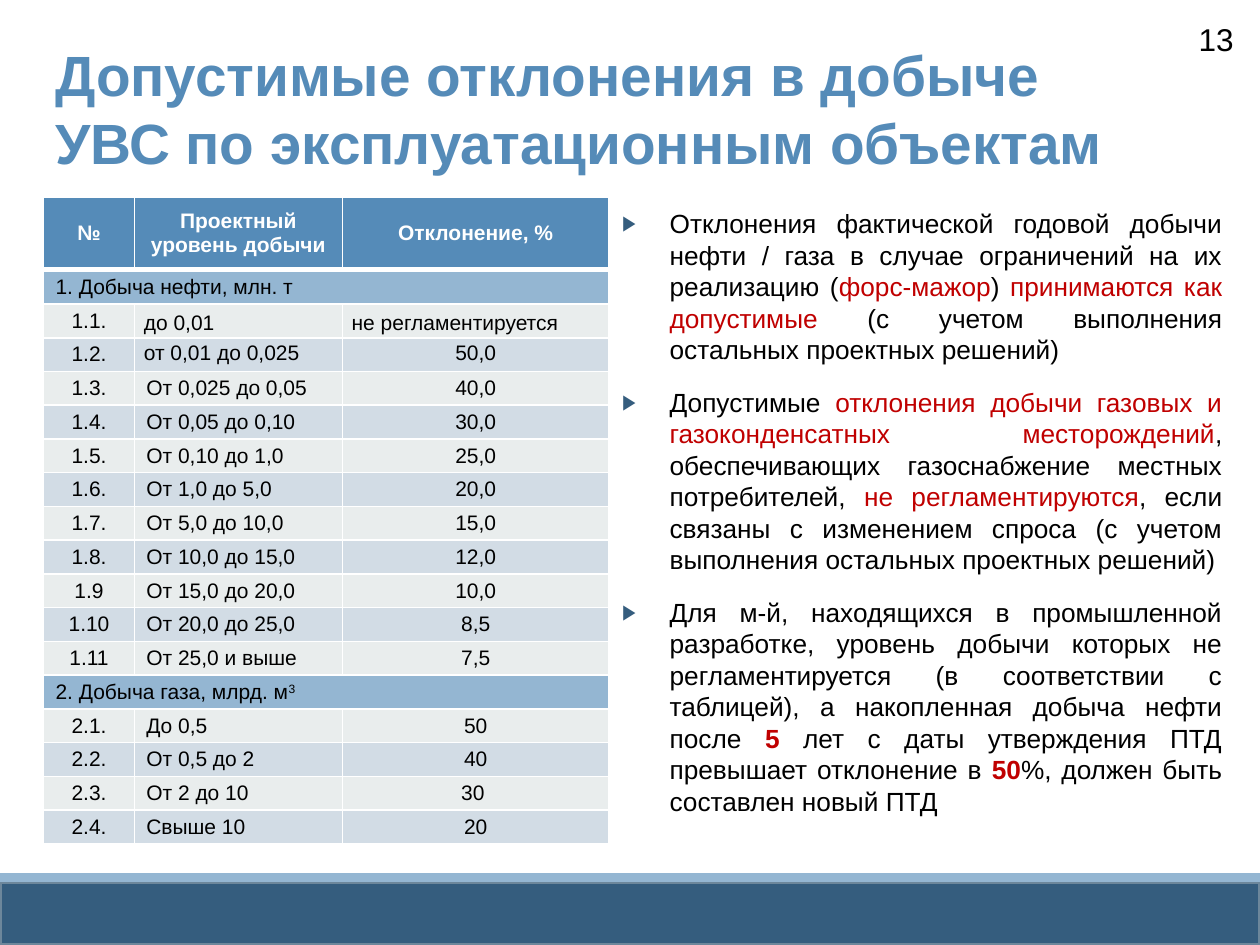
from lxml import etree
from pptx import Presentation
from pptx.dml.color import RGBColor
from pptx.enum import shapes, text
from pptx.oxml import ns
from pptx.util import Cm, Pt

FONT = "Arial"
BLACK, WHITE, RED = "000000", "FFFFFF", "C00000"
BLUE, LIGHT_BLUE, DARK_BLUE = "558BB8", "94B6D2", "355D7E"
STRIPES = ("E9EDED", "D2DCE5")

TITLE = "Допустимые отклонения в добыче УВС по эксплуатационным объектам"
PAGE = "13"
HEADER = ("№", "Проектный уровень добычи", "Отклонение, %")
# Each section: heading, superscript after it, rows
SECTIONS = [
    ("1. Добыча нефти, млн. т", "", [
        ("1.1.", "до 0,01", "не регламентируется"),
        ("1.2.", "от 0,01 до 0,025", "50,0"),
        ("1.3.", "От 0,025 до 0,05", "40,0"),
        ("1.4.", "От 0,05 до 0,10", "30,0"),
        ("1.5.", "От 0,10 до 1,0", "25,0"),
        ("1.6.", "От 1,0 до 5,0", "20,0"),
        ("1.7.", "От 5,0 до 10,0", "15,0"),
        ("1.8.", "От 10,0 до 15,0", "12,0"),
        ("1.9", "От 15,0 до 20,0", "10,0"),
        ("1.10", "От 20,0 до 25,0", "8,5"),
        ("1.11", "От 25,0 и выше", "7,5"),
    ]),
    ("2. Добыча газа, млрд. м", "3", [
        ("2.1.", "До 0,5", "50"),
        ("2.2.", "От 0,5 до 2", "40"),
        ("2.3.", "От 2 до 10", "30 "),
        ("2.4.", "Свыше 10", "20"),
    ]),
]
# Each note: (words, colour, bold)
NOTES = [
    [("Отклонения фактической годовой добычи нефти / газа в случае ограничений "
      "на их реализацию (", BLACK, False),
     ("форс-мажор", RED, False), (") ", BLACK, False),
     ("принимаются как допустимые", RED, False),
     (" (с учетом выполнения остальных проектных решений)", BLACK, False)],
    [("Допустимые ", BLACK, False),
     ("отклонения добычи газовых и газоконденсатных месторождений", RED, False),
     (", обеспечивающих газоснабжение местных потребителей, ", BLACK, False),
     ("не регламентируются", RED, False),
     (", если связаны с изменением спроса (с учетом выполнения остальных "
      "проектных решений)", BLACK, False)],
    [("Для м-й, находящихся в промышленной разработке, уровень добычи которых "
      "не регламентируется (в соответствии с таблицей), а накопленная добыча "
      "нефти после ", BLACK, False),
     ("5", RED, True),
     (" лет с даты утверждения ПТД превышает отклонение в ", BLACK, False),
     ("50", RED, True),
     ("%, должен быть составлен новый ПТД", BLACK, False)],
]

COLUMN_WIDTHS = (1.83, 4.19, 5.38)
HEADER_HEIGHT, FIRST_SECTION_HEIGHT, ROW_HEIGHT = 1.45, 0.7, 0.68
LEFT, CENTER = text.PP_ALIGN.LEFT, text.PP_ALIGN.CENTER
MIDDLE, TOP = text.MSO_ANCHOR.MIDDLE, text.MSO_ANCHOR.TOP


def rgb(color):
    return RGBColor.from_string(color)


def style(run, size, color=BLACK, bold=False):
    run.font.name, run.font.size, run.font.bold = FONT, Pt(size), bold
    run.font.color.rgb = rgb(color)


def add_band(slide, top, height, fill, outline=None):
    band = slide.shapes.add_shape(shapes.MSO_SHAPE.RECTANGLE,
                                  0, Cm(top), Cm(25.4), Cm(height))
    band.shadow.inherit = False
    band.fill.solid()
    band.fill.fore_color.rgb = rgb(fill)
    if outline:
        band.line.color.rgb = rgb(outline)
        band.line.width = Pt(2)
    else:
        band.line.fill.background()


def add_text_frame(slide, left, top, width, height):
    frame = slide.shapes.add_textbox(Cm(left), Cm(top), Cm(width), Cm(height)).text_frame
    frame.word_wrap = True
    return frame


def add_line_of_text(slide, box, words, size, color, bold, align):
    paragraph = add_text_frame(slide, *box).paragraphs[0]
    paragraph.text, paragraph.alignment = words, align
    style(paragraph.runs[0], size, color, bold)


def add_borders(cell, top, bottom):
    """Draw white cell edges; top and bottom are widths in points."""
    props = cell._tc.get_or_add_tcPr()
    edges = (("lnL", 1), ("lnR", 1), ("lnT", top), ("lnB", bottom))
    for position, (tag, width) in enumerate(edges):
        edge = etree.Element(ns.qn("a:" + tag), w=str(Pt(width)))
        fill = etree.SubElement(edge, ns.qn("a:solidFill"))
        etree.SubElement(fill, ns.qn("a:srgbClr"), val=WHITE)
        props.insert(position, edge)


def fill_cell(cell, words, fill, align, color=BLACK, bold=False, anchor=MIDDLE,
              margins=(0.24, 0.05), spacing=None):
    cell.fill.solid()
    cell.fill.fore_color.rgb = rgb(fill)
    cell.vertical_anchor = anchor
    cell.margin_left = cell.margin_right = Cm(margins[0])
    cell.margin_top = cell.margin_bottom = Cm(margins[1])
    paragraph = cell.text_frame.paragraphs[0]
    paragraph.text, paragraph.alignment = words, align
    paragraph.line_spacing = spacing
    style(paragraph.runs[0], 12, color, bold)


def add_deviation_table(slide):
    row_count = 1 + sum(1 + len(rows) for _, _, rows in SECTIONS)
    heights = [HEADER_HEIGHT, FIRST_SECTION_HEIGHT] + [ROW_HEIGHT] * (row_count - 2)
    table = slide.shapes.add_table(row_count, len(HEADER), Cm(0.88), Cm(3.98),
                                   Cm(sum(COLUMN_WIDTHS)), Cm(sum(heights))).table
    for column, width in zip(table.columns, COLUMN_WIDTHS):
        column.width = Cm(width)
    for row, height in zip(table.rows, heights):
        row.height = Cm(height)

    for column, words in enumerate(HEADER):
        fill_cell(table.cell(0, column), words, BLUE, CENTER, WHITE, True)
    line = 1
    for heading, superscript, rows in SECTIONS:
        cell = table.cell(line, 0)
        cell.merge(table.cell(line, len(HEADER) - 1))
        fill_cell(cell, heading, LIGHT_BLUE, LEFT)
        if superscript:
            run = cell.text_frame.paragraphs[0].add_run()
            run.text = superscript
            style(run, 12)
            run.font._element.set("baseline", "30000")
        for index, row in enumerate(rows):
            for column, words in enumerate(row):
                align = LEFT if column == 1 or words == "не регламентируется" else CENTER
                tight = {}
                if line == 1 and index < 2 and column > 0:
                    tight = dict(margins=(0.19, 0), spacing=1.15,
                                 anchor=TOP if index else MIDDLE)
                fill_cell(table.cell(line + 1 + index, column), words,
                          STRIPES[index % 2], align, **tight)
        line += 1 + len(rows)

    for index, row in enumerate(table.rows):
        for cell in row.cells:
            add_borders(cell, 3 if index == 1 else 1, 3 if index == 0 else 1)


def add_bullet(paragraph):
    props = paragraph._p.get_or_add_pPr()
    props.set("marL", str(Cm(0.96)))
    props.set("indent", str(-Cm(0.96)))
    color = etree.SubElement(props, ns.qn("a:buClr"))
    etree.SubElement(color, ns.qn("a:srgbClr"), val=DARK_BLUE)
    etree.SubElement(props, ns.qn("a:buSzPct"), val="80000")
    etree.SubElement(props, ns.qn("a:buFont"), typeface=FONT)
    etree.SubElement(props, ns.qn("a:buChar"), char="▶")


def add_notes_column(slide):
    frame = add_text_frame(slide, 12.29, 4.06, 12.6, 12.65)
    for index, parts in enumerate(NOTES):
        paragraph = frame.add_paragraph() if index else frame.paragraphs[0]
        paragraph.alignment = text.PP_ALIGN.JUSTIFY
        paragraph.space_before = paragraph.space_after = Pt(6)
        add_bullet(paragraph)
        for words, color, bold in parts:
            run = paragraph.add_run()
            run.text = words
            style(run, 15, color, bold)


def main():
    deck = Presentation()
    deck.slide_width, deck.slide_height = Cm(25.4), Cm(19.05)
    slide = deck.slides.add_slide(deck.slide_layouts[6])
    add_band(slide, 17.78, 1.27, DARK_BLUE, "6D879B")
    add_band(slide, 17.6, 0.18, LIGHT_BLUE)
    add_line_of_text(slide, (22.38, 0.28, 2.74, 1.02), PAGE, 18, BLACK, False,
                     text.PP_ALIGN.RIGHT)
    add_line_of_text(slide, (0.86, 0.67, 22.86, 2.8), TITLE, 32.4, BLUE, True, LEFT)
    add_deviation_table(slide)
    add_notes_column(slide)
    deck.save("out.pptx")


if __name__ == "__main__":
    main()
